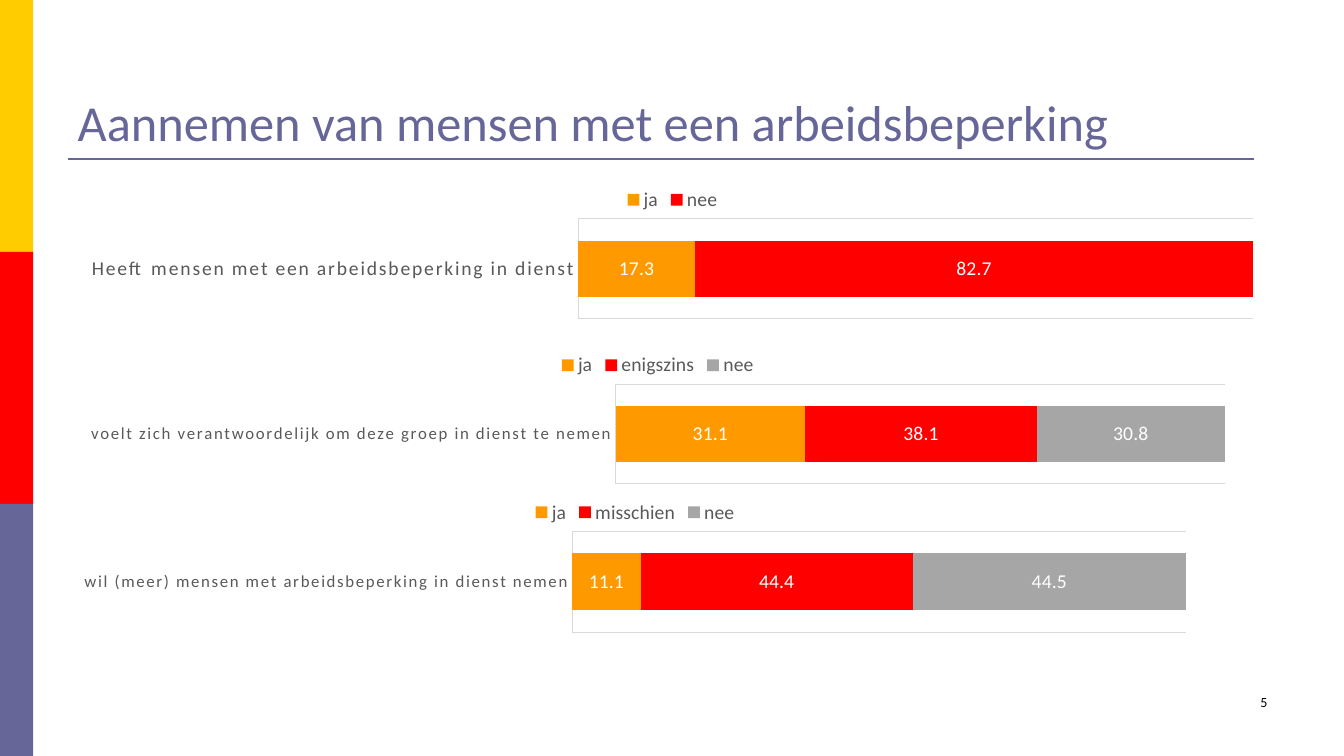
from dataclasses import dataclass

from pptx import Presentation
from pptx import util as u
from pptx.chart.data import CategoryChartData
from pptx.dml.color import RGBColor
from pptx.enum import chart as charts, shapes, text
from pptx.oxml import parse_xml
from pptx.oxml.ns import nsdecls


@dataclass(frozen=True)
class Theme:
    font: str = "Calibri"
    yellow: str = "FFCC00"
    red: str = "FF0000"
    purple: str = "666699"
    orange: str = "FF9900"
    silver: str = "A6A6A6"
    grid: str = "D9D9D9"
    label: str = "595959"
    white: str = "FFFFFF"
    black: str = "000000"
    title_size: int = 36
    chart_size: int = 14
    small_label_size: int = 12
    number_size: int = 10
    letter_gap: str = "120"  # hundredths of a point


theme = Theme()


def style_font(font, size, color):
    font.name = theme.font
    font.size = u.Pt(size)
    font.bold = False
    font.color.rgb = RGBColor.from_string(color)


def style_line(line, color, width):
    line.color.rgb = RGBColor.from_string(color)
    line.width = u.Pt(width)


deck = Presentation()
deck.slide_width, deck.slide_height = u.Inches(13.33), u.Inches(7.5)
page = deck.slides.add_slide(deck.slide_layouts[5])

# Colour bands down the left edge
for index, color in enumerate((theme.yellow, theme.red, theme.purple)):
    band = page.shapes.add_shape(
        shapes.MSO_SHAPE.RECTANGLE, 0, u.Inches(2.5 * index), u.Inches(0.33), u.Inches(2.5))
    band.shadow.inherit = False
    band.fill.solid()
    band.fill.fore_color.rgb = RGBColor.from_string(color)
    band.line.fill.background()

# Title and the rule beneath it
title = page.shapes.title
title.left, title.top = u.Inches(0.67), u.Inches(0.3)
title.width, title.height = u.Inches(12), u.Inches(1.25)
title.text_frame.vertical_anchor = text.MSO_ANCHOR.BOTTOM
para = title.text_frame.paragraphs[0]
para.alignment = text.PP_ALIGN.LEFT
span = para.add_run()
span.text = "Aannemen van mensen met een arbeidsbeperking"
style_font(span.font, theme.title_size, theme.purple)

rule = page.shapes.add_connector(
    shapes.MSO_CONNECTOR.STRAIGHT, u.Inches(0.67), u.Inches(1.58), u.Inches(12.44), u.Inches(1.58))
style_line(rule.line, theme.purple, 1.5)
rule._element.spPr.append(parse_xml(f"<a:effectLst {nsdecls('a')}/>"))

# Page number
box = page.shapes.add_textbox(u.Inches(9.56), u.Inches(6.83), u.Inches(3.11), u.Inches(0.5))
box.text_frame.word_wrap = True
para = box.text_frame.paragraphs[0]
para.alignment = text.PP_ALIGN.RIGHT
span = para.add_run()
span.text = "5"
style_font(span.font, theme.number_size, theme.black)

# One stacked bar per question: place, label size, question, answers
questions = [
    ((0.67, 1.75, 12, 1.44), theme.chart_size,
     "Heeft mensen met een arbeidsbeperking in dienst",
     {"ja": 17.3, "nee": 82.7}),
    ((0.67, 3.39, 11.71, 1.44), theme.small_label_size,
     "voelt zich verantwoordelijk om deze groep in dienst te nemen",
     {"ja": 31.1, "enigszins": 38.1, "nee": 30.8}),
    ((0.61, 4.85, 11.38, 1.45), theme.small_label_size,
     "wil (meer) mensen met arbeidsbeperking in dienst nemen",
     {"ja": 11.1, "misschien": 44.4, "nee": 44.5}),
]

for place, label_size, question, answers in questions:
    data = CategoryChartData()
    data.categories = [question]
    for answer, share in answers.items():
        data.add_series(answer, [share])
    chart = page.shapes.add_chart(
        charts.XL_CHART_TYPE.BAR_STACKED, *map(u.Inches, place), data).chart
    style_font(chart.font, theme.number_size, theme.black)
    chart.has_title = False

    # Legend
    chart.has_legend = True
    chart.legend.position = charts.XL_LEGEND_POSITION.TOP
    chart.legend.include_in_layout = False
    style_font(chart.legend.font, theme.chart_size, theme.label)

    # Axes
    chart.value_axis.visible = False
    chart.value_axis.has_major_gridlines = False
    chart.value_axis.minimum_scale = 0
    chart.value_axis.maximum_scale = 100
    axis = chart.category_axis
    axis.major_tick_mark = axis.minor_tick_mark = charts.XL_TICK_MARK.NONE
    axis.has_major_gridlines = True
    style_line(axis.major_gridlines.format.line, theme.grid, 0.75)
    style_line(axis.format.line, theme.grid, 0.75)
    style_font(axis.tick_labels.font, label_size, theme.label)
    axis.tick_labels.font._element.set("spc", theme.letter_gap)

    # Bars and their values
    plot = chart.plots[0]
    plot.gap_width, plot.overlap = 79, 100
    plot.vary_by_categories = False
    for series, color in zip(plot.series, (theme.orange, theme.red, theme.silver)):
        series.format.fill.solid()
        series.format.fill.fore_color.rgb = RGBColor.from_string(color)
        labels = series.data_labels
        labels.show_value = True
        labels.position = charts.XL_LABEL_POSITION.CENTER
        style_font(labels.font, theme.chart_size, theme.white)

deck.save("out.pptx")
